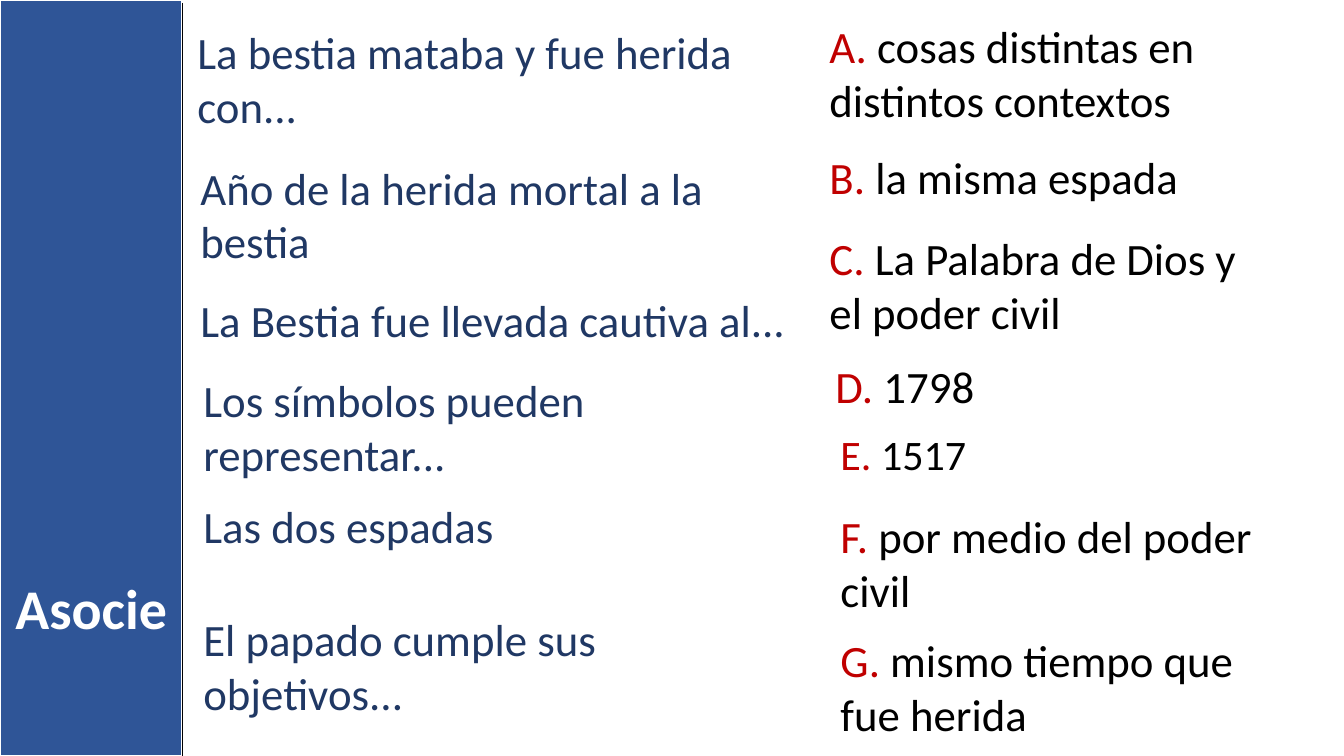
from lxml import etree
from pptx import Presentation
from pptx.dml.color import RGBColor
from pptx.enum.shapes import MSO_CONNECTOR, MSO_SHAPE
from pptx.enum.text import MSO_AUTO_SIZE, PP_ALIGN
from pptx.oxml.ns import qn
from pptx.util import Pt

RECTANGLE = MSO_SHAPE.RECTANGLE
STRAIGHT = MSO_CONNECTOR.STRAIGHT
GROW = MSO_AUTO_SIZE.SHAPE_TO_FIT_TEXT
LEFT, CENTER = PP_ALIGN.LEFT, PP_ALIGN.CENTER

WIDTH, HEIGHT = 960, 540
BAND_WIDTH = 130.3
BLUE, NAVY, RED, BLACK, WHITE = "2F5597", "203864", "C00000", "000000", "FFFFFF"

PROMPTS = [
    ("La bestia mataba y fue herida con...", 133.9, 14.4, 422, 85),
    ("Año de la herida mortal a la bestia", 136.1, 110.9, 451.4, 85),
    ("La Bestia fue llevada cautiva al...", 136.1, 205.2, 451.4, 46),
    ("Los símbolos pueden representar...", 138.2, 262.8, 411.8, 85),
    ("Las dos espadas", 138.2, 352.8, 365.8, 46),
    ("El papado cumple sus objetivos...", 138.2, 433.4, 343.4, 85),
]
ANSWERS = [
    ("cosas distintas en distintos contextos", 585.4, 10.1, 319, 85, 32),
    ("la misma espada", 585.4, 103.7, 342, 46, 32),
    ("La Palabra de Dios y el poder civil", 585.4, 161.3, 311, 85, 32),
    ("1798", 589.7, 252.7, 362.9, 46, 32),
    ("1517", 593.3, 302.4, 345.6, 44, 30),
    ("por medio del poder civil", 593.3, 360, 345.6, 85, 32),
    ("mismo tiempo que fue herida", 593.3, 448.6, 334.1, 85, 32),
]


def color(value):
    return RGBColor.from_string(value)


class Board:
    """Draw the elements of one slide in a shared style."""

    font = "Calibri"

    def __init__(self, slide):
        self.shapes = slide.shapes

    def band(self, x, y, width, height, fill, outline):
        band = self.shapes.add_shape(RECTANGLE, Pt(x), Pt(y), Pt(width), Pt(height))
        band.shadow.inherit = False
        band.fill.solid()
        band.fill.fore_color.rgb = color(fill)
        band.line.color.rgb = color(outline)
        band.line.width = Pt(1.5)

    def rule(self, x1, y1, x2, y2, stroke):
        rule = self.shapes.add_connector(STRAIGHT, Pt(x1), Pt(y1), Pt(x2), Pt(y2))
        rule.line.color.rgb = color(stroke)
        rule.line.width = Pt(1)
        etree.SubElement(rule._element.spPr, qn("a:effectLst"))

    def text(self, runs, x, y, width, height, size=32, bold=False, align=LEFT):
        frame = self.shapes.add_textbox(Pt(x), Pt(y), Pt(width), Pt(height)).text_frame
        frame.word_wrap = True
        frame.auto_size = GROW
        paragraph = frame.paragraphs[0]
        paragraph.alignment = align
        for words, ink in runs:
            run = paragraph.add_run()
            run.text = words
            run.font.name = self.font
            run.font.size = Pt(size)
            run.font.bold = bold
            run.font.color.rgb = color(ink)


def main():
    deck = Presentation()
    deck.slide_width, deck.slide_height = Pt(WIDTH), Pt(HEIGHT)
    board = Board(deck.slides.add_slide(deck.slide_layouts[6]))

    board.band(0, 0, BAND_WIDTH, HEIGHT, BLUE, WHITE)
    board.rule(BAND_WIDTH, 2, BAND_WIDTH, HEIGHT, BLACK)
    board.text([("Asocie", WHITE)], 0, 406, BAND_WIDTH, 55.7, 40, True, CENTER)
    for prompt, *place in PROMPTS:
        board.text([(prompt, NAVY)], *place)
    for letter, (answer, *place) in zip("ABCDEFG", ANSWERS):
        board.text([(f"{letter}. ", RED), (answer, BLACK)], *place)

    deck.save("out.pptx")


if __name__ == "__main__":
    main()
